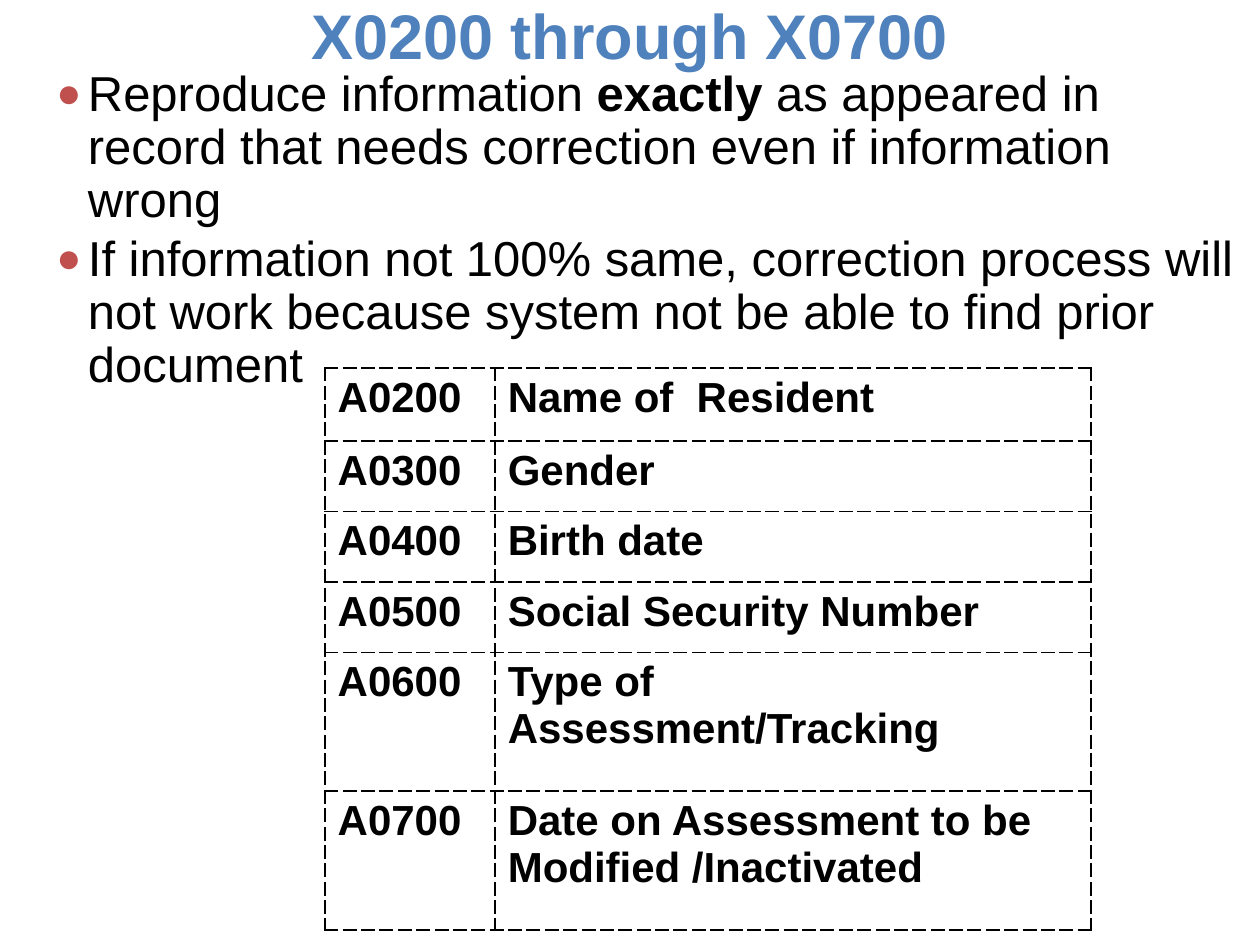
from lxml.etree import SubElement
from pptx import Presentation
from pptx.dml.color import RGBColor
from pptx.enum.text import MSO_ANCHOR, PP_ALIGN
from pptx.oxml.ns import qn
from pptx.util import Inches, Pt

BLUE = RGBColor(0x4F, 0x81, 0xBD)
RED = RGBColor(0xC0, 0x50, 0x4D)
BLACK = RGBColor(0, 0, 0)
WHITE = RGBColor(0xFF, 0xFF, 0xFF)

TITLE_FORMAT = {"name": "Arial", "size": Pt(36), "bold": True, "color": BLUE}
BODY_FORMAT = {"name": "Arial", "size": Pt(28), "bold": False, "color": BLACK}
TABLE_FORMAT = {"name": "Arial", "size": Pt(24), "bold": True, "color": BLACK}

BULLETS = [
    [("Reproduce information ", False), ("exactly", True),
     (" as appeared in record that needs correction even if information wrong", False)],
    [("If information not 100% same, correction process will not work because "
      "system not be able to find prior document", False)],
]
FIELDS = [
    ("A0200", "Name of  Resident", 0.58),
    ("A0300", "Gender", 0.56),
    ("A0400", "Birth date", 0.56),
    ("A0500", "Social Security Number", 0.56),
    ("A0600", "Type of Assessment/Tracking", 1.1),
    ("A0700", "Date on Assessment to be\nModified /Inactivated", 1.1),
]
COLUMN_WIDTHS = (1.35, 4.73)


class SlideBuilder:
    def __init__(self, slide):
        self.slide = slide

    def add_run(self, paragraph, text, style):
        run = paragraph.add_run()
        run.text = text
        for name, value in style.items():
            if name == "color":
                run.font.color.rgb = value
            else:
                setattr(run.font, name, value)

    def text_frame(self, left, top, width, height, **settings):
        box = self.slide.shapes.add_textbox(
            Inches(left), Inches(top), Inches(width), Inches(height))
        for name, value in {"word_wrap": True, **settings}.items():
            setattr(box.text_frame, name, value)
        return box.text_frame

    def title(self, text):
        frame = self.text_frame(0, 0, 10, 0.67, vertical_anchor=MSO_ANCHOR.BOTTOM,
                                margin_bottom=Inches(0.1))
        paragraph = frame.paragraphs[0]
        paragraph.alignment = PP_ALIGN.CENTER
        self.add_run(paragraph, text, TITLE_FORMAT)

    def bullet_list(self, items):
        frame = self.text_frame(0, 0.5, 10, 7)
        for index, runs in enumerate(items):
            paragraph = frame.add_paragraph() if index else frame.paragraphs[0]
            self.add_bullet(paragraph)
            paragraph.line_spacing = 0.9
            if index:
                paragraph.space_before = Pt(3.7)
            for text, bold in runs:
                self.add_run(paragraph, text, {**BODY_FORMAT, "bold": bold})

    def add_bullet(self, paragraph):
        properties = paragraph._p.get_or_add_pPr()
        properties.set("marL", str(Inches(0.6)))
        properties.set("indent", str(Inches(-0.25)))
        color = SubElement(properties, qn("a:buClr"))
        SubElement(color, qn("a:srgbClr"), val=str(RED))
        SubElement(properties, qn("a:buSzPct"), val="85000")
        SubElement(properties, qn("a:buFont"), typeface="Arial")
        SubElement(properties, qn("a:buChar"), char="●")

    def table(self, left, top, rows):
        frame = self.slide.shapes.add_table(
            len(rows), len(COLUMN_WIDTHS), Inches(left), Inches(top),
            Inches(sum(COLUMN_WIDTHS)), Inches(sum(row[-1] for row in rows)))
        table = frame.table
        table.first_row = table.horz_banding = False
        for column, width in zip(table.columns, COLUMN_WIDTHS):
            column.width = Inches(width)
        for row, (*texts, height) in zip(table.rows, rows):
            row.height = Inches(height)
            for cell, text in zip(row.cells, texts):
                self.fill_cell(cell, text)

    def fill_cell(self, cell, text):
        properties = cell._tc.get_or_add_tcPr()
        for side in ("lnL", "lnR", "lnT", "lnB"):
            line = SubElement(properties, qn(f"a:{side}"), w=str(Pt(1)))
            fill = SubElement(line, qn("a:solidFill"))
            SubElement(fill, qn("a:srgbClr"), val=str(BLACK))
            SubElement(line, qn("a:prstDash"), val="sysDash")
        cell.fill.solid()
        cell.fill.fore_color.rgb = WHITE
        frame = cell.text_frame
        for index, line_text in enumerate(text.split("\n")):
            paragraph = frame.add_paragraph() if index else frame.paragraphs[0]
            self.add_run(paragraph, line_text, TABLE_FORMAT)


def main():
    presentation = Presentation()
    presentation.slide_width = Inches(10)
    presentation.slide_height = Inches(7.5)
    builder = SlideBuilder(presentation.slides.add_slide(presentation.slide_layouts[6]))

    # Heading and instructions
    builder.title("X0200 through X0700")
    builder.bullet_list(BULLETS)

    # Fields to reproduce
    builder.table(2.58, 2.92, FIELDS)

    presentation.save("out.pptx")


if __name__ == "__main__":
    main()
